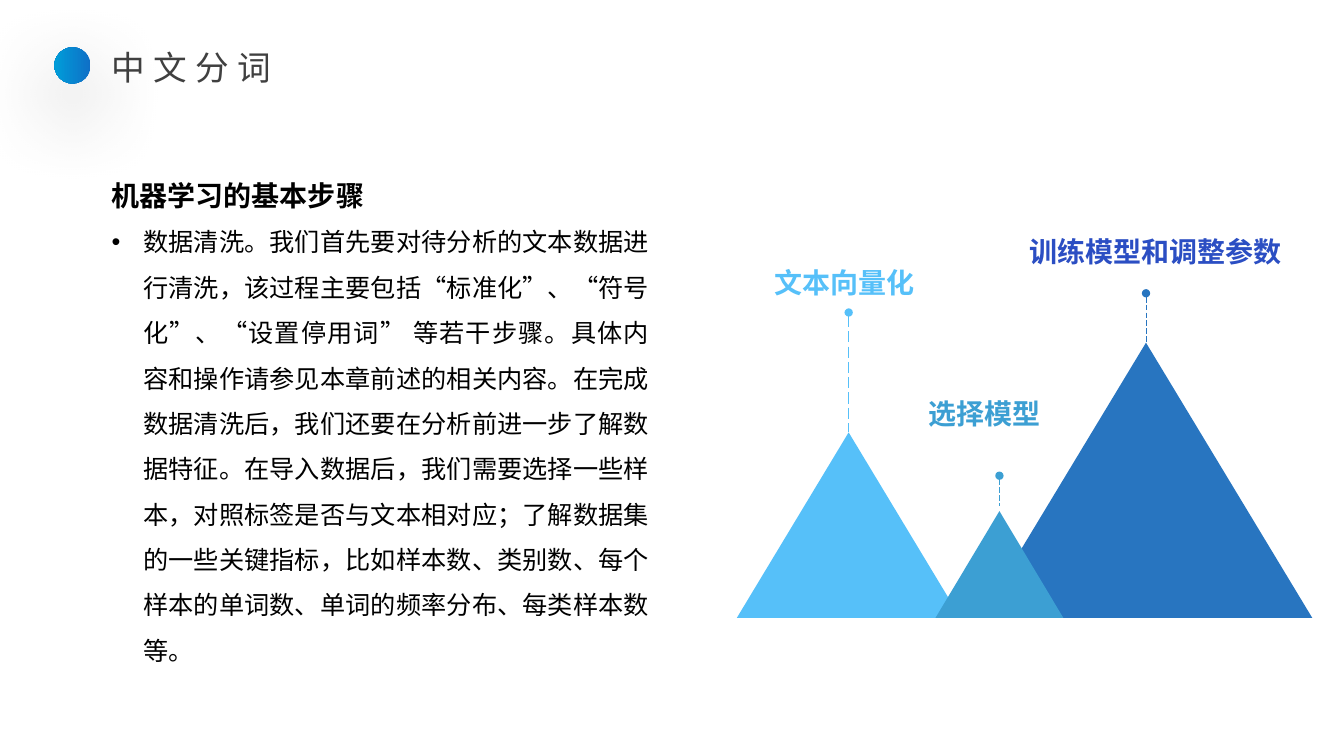
from dataclasses import dataclass

from lxml.etree import SubElement
from pptx import Presentation
from pptx.dml.color import RGBColor
from pptx.enum.dml import MSO_LINE
from pptx.enum.shapes import MSO_CONNECTOR, MSO_SHAPE
from pptx.enum.text import MSO_ANCHOR, MSO_AUTO_SIZE, PP_ALIGN
from pptx.oxml.ns import qn
from pptx.util import Pt


@dataclass(frozen=True)
class Theme:
    font: str = "Noto Sans CJK SC"
    title_size: int = 24
    heading_size: int = 20
    body_size: int = 18
    title: str = "404040"
    ink: str = "000000"
    dot_right: str = "0F6FC6"
    dot_left: str = "009DD9"
    sky: str = "56C0F9"
    teal: str = "3C9FD3"
    blue: str = "2875C0"
    royal: str = "2B4EC3"


THEME = Theme()
BASELINE = 441.4

HEADING = "机器学习的基本步骤 "
CLEANING = (
    "数据清洗。我们首先要对待分析的文本数据进行清洗，该过程主要包括“标准化”、“符号化”、"
    "“设置停用词” 等若干步骤。具体内容和操作请参见本章前述的相关内容。在完成数据清洗后，"
    "我们还要在分析前进一步了解数据特征。在导入数据后，我们需要选择一些样本，对照标签是否与"
    "文本相对应；了解数据集的一些关键指标，比如样本数、类别数、每个样本的单词数、单词的频率"
    "分布、每类样本数等。"
)

# Each peak rises from the shared baseline; its pin stands over the apex.
PEAKS = [
    dict(label="文本向量化 ", label_box=(542.9, 178.6, 125.3, 31), label_color=THEME.sky,
         color=THEME.sky, left=526.3, width=159.8, height=132.5,
         pin=(223.2, 308.9), pin_weight=1, align=PP_ALIGN.CENTER, line_spacing=1.5),
    dict(label="训练模型和调整参数", label_box=(722.9, 151.9, 205.2, 39.6),
         label_color=THEME.royal, color=THEME.blue, left=699.8, width=237.6, height=196.6,
         pin=(209.5, 244.8), pin_weight=0.5, align=PP_ALIGN.CENTER, line_spacing=1.5),
    dict(label="选择模型", label_box=(655.9, 277.9, 103.7, 31), label_color=THEME.teal,
         color=THEME.teal, left=668.2, width=91.4, height=76.3,
         pin=(339.8, 361.4), pin_weight=0.5, align=PP_ALIGN.LEFT, line_spacing=1),
]


def apply(target, values):
    for name, value in values.items():
        setattr(target, name, value)


def points(*lengths):
    return [Pt(length) for length in lengths]


def write(para, text, size, color, bold=False, **para_format):
    apply(para, para_format)
    span = para.add_run()
    span.text = text
    apply(span.font, dict(name=THEME.font, size=Pt(size), bold=bold))
    span.font.color.rgb = RGBColor.from_string(color)
    SubElement(span.font._element, qn("a:ea"), typeface=THEME.font)
    return span


def add_text_box(page, bounds, **frame_format):
    frame = page.shapes.add_textbox(*points(*bounds)).text_frame
    apply(frame, dict(word_wrap=True, **frame_format))
    return frame


def add_plain_shape(page, kind, bounds):
    shape = page.shapes.add_shape(kind, *points(*bounds))
    shape.shadow.inherit = False
    shape.line.fill.background()
    return shape


def add_title(page, text):
    title = page.shapes.title
    apply(title, dict(zip(("left", "top", "width", "height"), points(72.7, 30.2, 360, 36))))
    frame = title.text_frame
    apply(frame, dict(word_wrap=True, vertical_anchor=MSO_ANCHOR.TOP,
                      auto_size=MSO_AUTO_SIZE.SHAPE_TO_FIT_TEXT))
    span = write(frame.paragraphs[0], text, THEME.title_size, THEME.title,
                 alignment=PP_ALIGN.JUSTIFY)
    span.font._element.set("spc", "600")


def add_title_dot(page):
    dot = add_plain_shape(page, MSO_SHAPE.OVAL, (38.9, 33.8, 25.9, 25.9))
    dot.fill.gradient()
    dot.fill.gradient_angle = 180
    for stop, color in zip(dot.fill.gradient_stops, (THEME.dot_right, THEME.dot_left)):
        stop.color.rgb = RGBColor.from_string(color)
    # Soft shadow falling below the dot
    effects = dot._element.spPr.find(qn("a:effectLst"))
    shadow = SubElement(effects, qn("a:outerShdw"), blurRad=str(Pt(60)),
                        dist=str(Pt(20)), dir="5400000", algn="t", rotWithShape="0")
    shade = SubElement(shadow, qn("a:srgbClr"), val=THEME.ink)
    SubElement(shade, qn("a:alpha"), val="40000")


def add_bullet(para, indent):
    props = para._p.get_or_add_pPr()
    props.set("marL", str(Pt(indent)))
    props.set("indent", str(-Pt(indent)))
    SubElement(props, qn("a:buFont"), typeface="Arial")
    SubElement(props, qn("a:buChar"), char="•")


def add_steps(page):
    frame = add_text_box(page, (72.7, 111.6, 398.2, 370.8),
                         auto_size=MSO_AUTO_SIZE.SHAPE_TO_FIT_TEXT)
    layout = dict(alignment=PP_ALIGN.JUSTIFY, line_spacing=1.5)
    write(frame.paragraphs[0], HEADING, THEME.heading_size, THEME.ink, bold=True, **layout)
    para = frame.add_paragraph()
    write(para, CLEANING, THEME.body_size, THEME.ink, **layout)
    add_bullet(para, 22.5)


def add_pin(page, x, top, bottom, color, weight):
    pin = page.shapes.add_connector(MSO_CONNECTOR.STRAIGHT, *points(x, top, x, bottom))
    apply(pin.line, dict(width=Pt(weight), dash_style=MSO_LINE.LONG_DASH))
    pin.line.color.rgb = RGBColor.from_string(color)
    SubElement(pin.line._get_or_add_ln(), qn("a:headEnd"), type="oval")
    SubElement(pin._element.spPr, qn("a:effectLst"))


def add_peak(page, peak):
    frame = add_text_box(page, peak["label_box"], vertical_anchor=MSO_ANCHOR.MIDDLE,
                         margin_bottom=0)
    write(frame.paragraphs[0], peak["label"], THEME.heading_size, peak["label_color"],
          bold=True, alignment=peak["align"], line_spacing=peak["line_spacing"])

    left, width, height = peak["left"], peak["width"], peak["height"]
    triangle = add_plain_shape(page, MSO_SHAPE.ISOSCELES_TRIANGLE,
                               (left, BASELINE - height, width, height))
    triangle.fill.solid()
    triangle.fill.fore_color.rgb = RGBColor.from_string(peak["color"])
    add_pin(page, left + width / 2, *peak["pin"], peak["color"], peak["pin_weight"])


def main():
    deck = Presentation()
    apply(deck, dict(slide_width=Pt(960), slide_height=Pt(540)))
    page = deck.slides.add_slide(deck.slide_layouts[5])

    # Header
    add_title_dot(page)
    add_title(page, "中文分词")

    # Explanation on the left, peaks on the right
    add_steps(page)
    for peak in PEAKS:
        add_peak(page, peak)

    deck.save("out.pptx")


if __name__ == "__main__":
    main()
